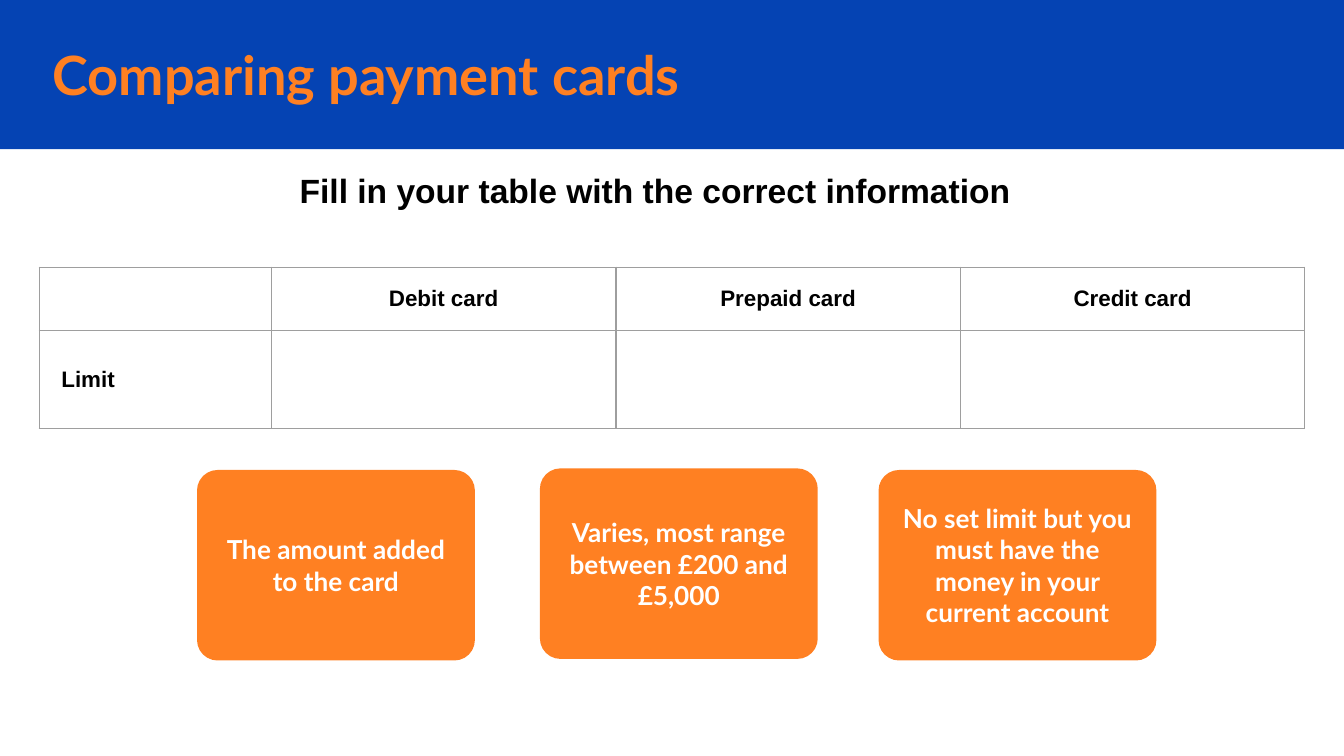
"""Builds a slide comparing payment cards with a table and three answer cards."""
from lxml import etree
from pptx import Presentation
from pptx.dml.color import RGBColor
from pptx.enum.shapes import MSO_SHAPE
from pptx.enum.text import MSO_ANCHOR, MSO_AUTO_SIZE, PP_ALIGN
from pptx.oxml.ns import qn
from pptx.util import Cm, Pt

RECT, ROUNDED = MSO_SHAPE.RECTANGLE, MSO_SHAPE.ROUNDED_RECTANGLE
LEFT, CENTER = PP_ALIGN.LEFT, PP_ALIGN.CENTER
TOP, MIDDLE = MSO_ANCHOR.TOP, MSO_ANCHOR.MIDDLE
NO_FIT = MSO_AUTO_SIZE.NONE

BLUE, ORANGE, WHITE, BLACK, GREY = "0543B3", "FF8022", "FFFFFF", "000000", "9E9E9E"
COLUMNS = [4.39, 6.51, 6.51, 6.51]
ROWS = [1.19, 1.86]
CELLS = [["", "Debit card", "Prepaid card", "Credit card"], ["Limit", "", "", ""]]
ANSWERS = [
    (3.76, 8.92, "The amount added to the card"),
    (10.24, 8.89, "Varies, most range between £200 and £5,000"),
    (16.64, 8.92, "No set limit but you must have the money in your current account"),
]


def rgb(value):
    """Return the colour for a hex string."""
    return RGBColor.from_string(value)


def set_text(tf, text, font="Arial", size=12, color=BLACK, align=CENTER):
    """Write one bold paragraph into a text frame."""
    p = tf.paragraphs[0]
    p.alignment = align
    r = p.add_run()
    r.text = text
    r.font.name, r.font.size, r.font.bold = font, Pt(size), True
    r.font.color.rgb = rgb(color)


def set_frame(tf, anchor=MIDDLE):
    """Give a text frame wrapping, equal insets and an anchor."""
    tf.word_wrap, tf.auto_size, tf.vertical_anchor = True, NO_FIT, anchor
    tf.margin_left = tf.margin_right = tf.margin_top = tf.margin_bottom = Cm(0.25)


def add_block(s, kind, left, top, width, height, fill):
    """Add a filled shape without outline or shadow."""
    sp = s.shapes.add_shape(kind, Cm(left), Cm(top), Cm(width), Cm(height))
    sp.shadow.inherit = False
    sp.fill.solid()
    sp.fill.fore_color.rgb = rgb(fill)
    sp.line.fill.background()
    return sp


def add_header(s, text):
    """Place the title on a blue band across the slide."""
    title = s.shapes.title
    band = add_block(s, RECT, 0, 0, 25.4, 2.82, BLUE)
    title.element.addprevious(band.element)
    title.left, title.top, title.width, title.height = Cm(0.74), Cm(0.69), Cm(21.49), Cm(1.42)
    set_frame(title.text_frame)
    set_text(title.text_frame, text, font="Lato", size=29, color=ORANGE, align=LEFT)


def add_instruction(s, text):
    """Add the centred instruction under the header."""
    sp = s.shapes.add_textbox(Cm(5.36), Cm(2.97), Cm(14.05), Cm(1.27))
    set_frame(sp.text_frame, TOP)
    set_text(sp.text_frame, text, size=18)


def set_borders(cell):
    """Draw a thin grey border on all four sides of a cell."""
    tcPr = cell._tc.get_or_add_tcPr()
    for i, side in enumerate(("lnL", "lnR", "lnT", "lnB")):
        ln = etree.Element(qn(f"a:{side}"), w=str(Pt(0.75)))
        fill = etree.SubElement(ln, qn("a:solidFill"))
        etree.SubElement(fill, qn("a:srgbClr"), val=GREY)
        tcPr.insert(i, ln)


def add_card_table(s):
    """Add the comparison table with blank cells to fill in."""
    frame = s.shapes.add_table(len(ROWS), len(COLUMNS), Cm(0.74), Cm(5.05),
                               Cm(sum(COLUMNS)), Cm(sum(ROWS)))
    table = frame.table
    table.first_row = table.horz_banding = False
    for column, width in zip(table.columns, COLUMNS):
        column.width = Cm(width)
    for i, (height, texts) in enumerate(zip(ROWS, CELLS)):
        table.rows[i].height = Cm(height)
        for j, text in enumerate(texts):
            cell = table.cell(i, j)
            cell.fill.solid()
            cell.fill.fore_color.rgb = rgb(WHITE)
            cell.vertical_anchor = MIDDLE
            if j == 0:
                cell.margin_left = cell.margin_right = Cm(0.42)
            if text:
                set_text(cell.text_frame, text, align=CENTER if j else LEFT)
            set_borders(cell)


def add_answer(s, left, top, text):
    """Add one orange answer card."""
    sp = add_block(s, ROUNDED, left, top, 5.18, 3.53, ORANGE)
    sp.adjustments[0] = 0.1
    sp.line.color.rgb = rgb(ORANGE)
    sp.line.width = Pt(2)
    set_frame(sp.text_frame)
    set_text(sp.text_frame, text, font="Lato", size=14, color=WHITE)


def main():
    """Build and save the slide."""
    prs = Presentation()
    prs.slide_width, prs.slide_height = Cm(25.4), Cm(14.29)
    s = prs.slides.add_slide(prs.slide_layouts[5])
    add_header(s, "Comparing payment cards")
    add_card_table(s)
    add_instruction(s, "Fill in your table with the correct information")
    for left, top, text in ANSWERS:
        add_answer(s, left, top, text)
    prs.save("out.pptx")


if __name__ == "__main__":
    main()
